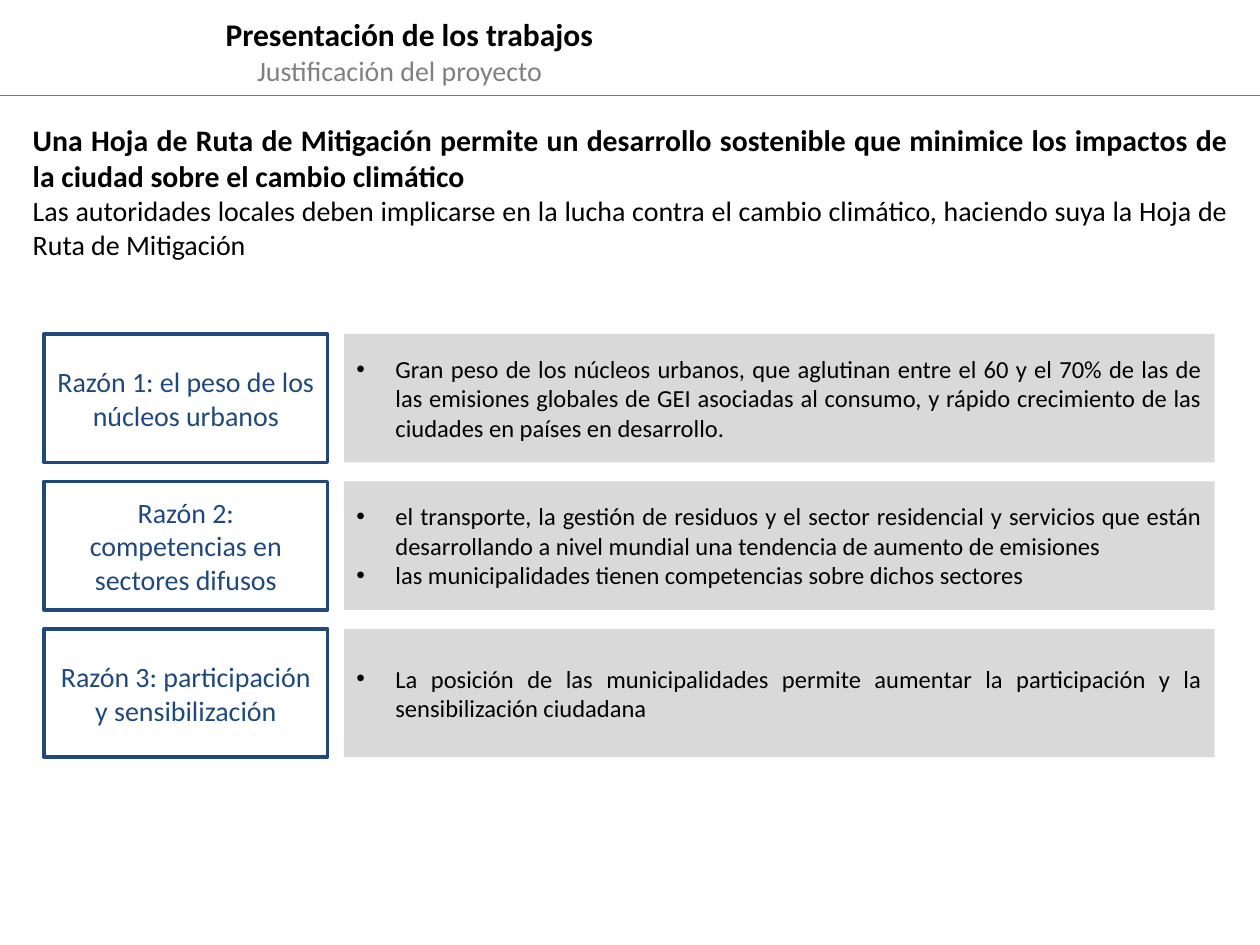
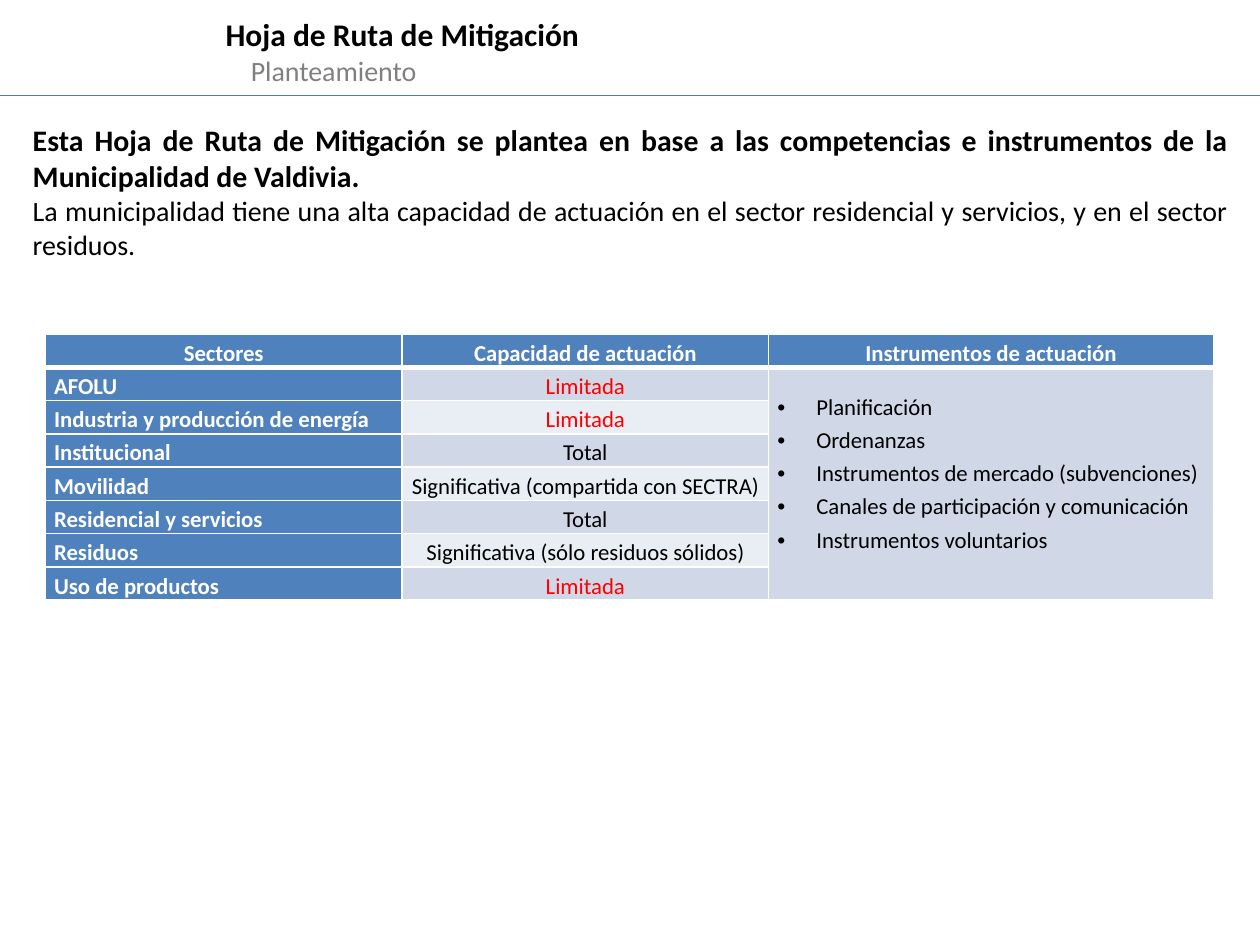
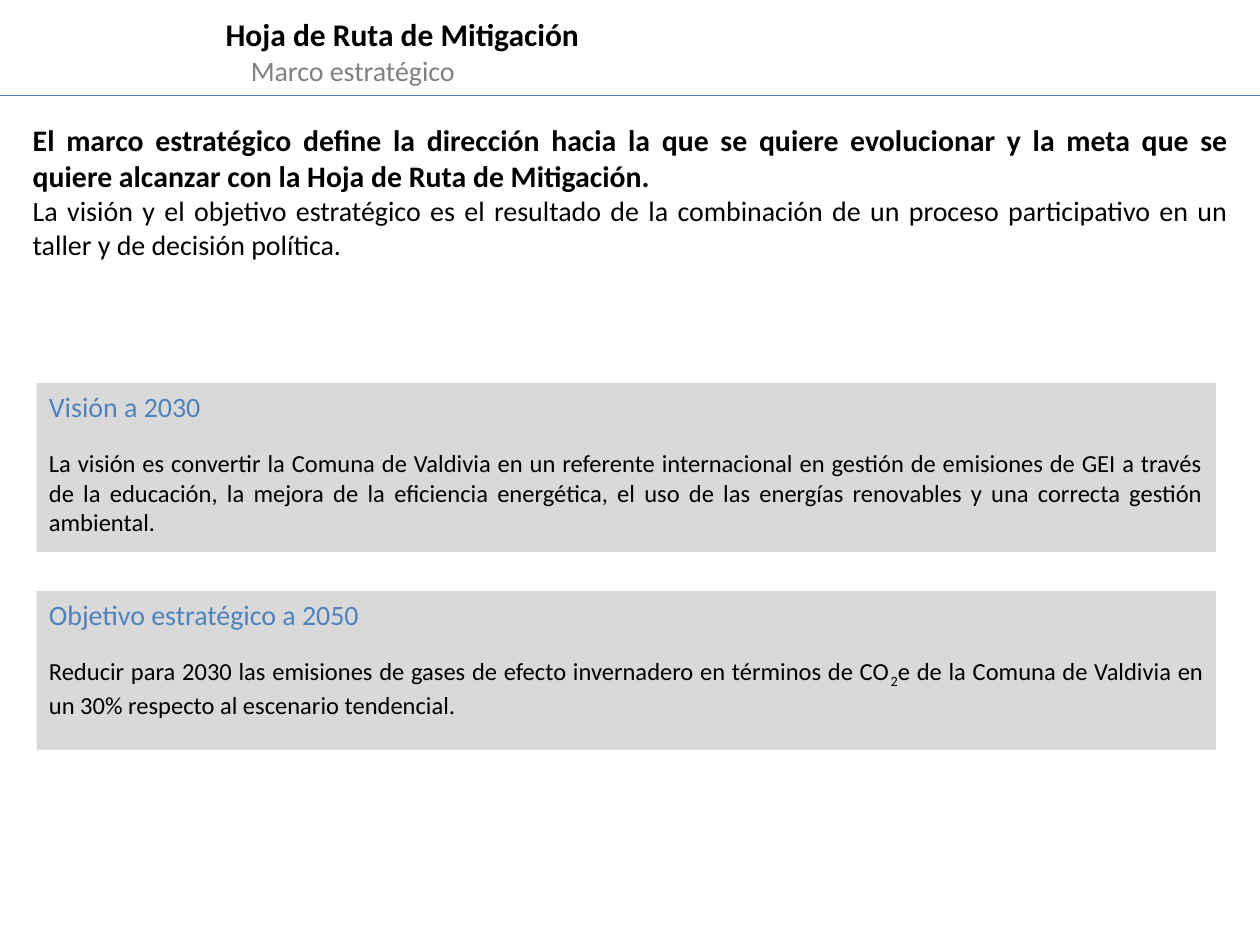
"""Build three slides on a city's mitigation road map."""
from lxml.etree import SubElement
from pptx import Presentation
from pptx.dml.color import RGBColor
from pptx.enum.shapes import MSO_CONNECTOR, MSO_SHAPE
from pptx.enum.text import MSO_ANCHOR, MSO_AUTO_SIZE, PP_ALIGN
from pptx.oxml.ns import qn
from pptx.util import Inches, Pt

FONT = "Calibri"
HUES = {
    "black": "000000", "white": "FFFFFF", "gray": "808080", "panel": "D9D9D9",
    "navy": "1F497D", "blue": "4F81BD", "rule": "4B7EBC", "red": "FF0000",
    "odd": "D0D8E8", "even": "E9EDF4",
}
LEFT, CENTER, FULL = PP_ALIGN.LEFT, PP_ALIGN.CENTER, PP_ALIGN.JUSTIFY

HEADS = [
    ("Presentación de los trabajos", "Justificación del proyecto", 0.25,
     "Una Hoja de Ruta de Mitigación permite un desarrollo sostenible que minimice los impactos de la ciudad sobre el cambio climático",
     "Las autoridades locales deben implicarse en la lucha contra el cambio climático, haciendo suya la Hoja de Ruta de Mitigación"),
    ("Hoja de Ruta de Mitigación", "Planteamiento", 0.2,
     "Esta Hoja de Ruta de Mitigación se plantea en base a las competencias e instrumentos de la Municipalidad de Valdivia.",
     "La municipalidad tiene una alta capacidad de actuación en el sector residencial y servicios, y en el sector residuos."),
    ("Hoja de Ruta de Mitigación", "Marco estratégico", 0.2,
     "El marco estratégico define la dirección hacia la que se quiere evolucionar y la meta que se quiere alcanzar con la Hoja de Ruta de Mitigación.",
     "La visión y el objetivo estratégico es el resultado de la combinación de un proceso participativo en un taller y de decisión política."),
]
REASONS = [
    ("Razón 1: el peso de los núcleos urbanos",
     ["Gran peso de los núcleos urbanos, que aglutinan entre el 60 y el 70% de las de las emisiones globales de GEI asociadas al consumo, y rápido crecimiento de las ciudades en países en desarrollo."]),
    ("Razón 2: competencias en sectores difusos",
     ["el transporte, la gestión de residuos y el sector residencial y servicios que están desarrollando a nivel mundial una tendencia de aumento de emisiones",
      "las municipalidades tienen competencias sobre dichos sectores"]),
    ("Razón 3: participación y sensibilización",
     ["La posición de las municipalidades permite aumentar la participación y la sensibilización ciudadana"]),
]
COLUMNS = [("Sectores", 2.83), ("Capacidad de actuación", 2.91),
           ("Instrumentos de actuación", 3.53)]
SECTORS = [
    ("AFOLU", "Limitada"),
    ("Industria y producción de energía", "Limitada"),
    ("Institucional", "Total"),
    ("Movilidad", "Significativa (compartida con SECTRA)"),
    ("Residencial y servicios", "Total"),
    ("Residuos", "Significativa (sólo residuos sólidos)"),
    ("Uso de productos", "Limitada"),
]
TOOLS = ["Planificación", "Ordenanzas", "Instrumentos de mercado (subvenciones)",
         "Canales de participación y comunicación", "Instrumentos voluntarios"]
GOALS = [
    ("Visión a 2030", 3.04, 1.34,
     "La visión es convertir la Comuna de Valdivia en un referente internacional en gestión de emisiones de GEI a través de la educación, la mejora de la eficiencia energética, el uso de las energías renovables y una correcta gestión ambiental."),
    ("Objetivo estratégico a 2050", 4.69, 1.26,
     "Reducir para 2030 las emisiones de gases de efecto invernadero en términos de CO_2_e de la Comuna de Valdivia en un 30% respecto al escenario tendencial."),
]


def tint(name):
    return RGBColor.from_string(HUES[name])


def write(frame, text, size=14, color="black", bold=False, align=LEFT,
          indent=0, bullet=False, before=0, spacing=1):
    para = frame.paragraphs[0]
    if para.runs:
        para = frame.add_paragraph()
    para.alignment, para.line_spacing = align, spacing
    para.space_before = Pt(before)
    props = para._p.get_or_add_pPr()
    hang = Inches(0.31) if bullet else 0
    props.set("marL", str(Inches(indent) + hang))
    props.set("indent", str(-hang))
    if bullet:
        SubElement(props, qn("a:buFont"), typeface="Arial")
        SubElement(props, qn("a:buChar"), char="•")
    else:
        SubElement(props, qn("a:buNone"))
    for place, part in enumerate(text.split("_")):
        run = para.add_run()
        run.text = part
        font = run.font
        font.name, font.size, font.bold = FONT, Pt(size), bold
        font.color.rgb = tint(color)
        if place % 2:
            font._element.set("baseline", "-25000")


def place(holder, left, top, width, height, anchor):
    holder.left, holder.top = Inches(left), Inches(top)
    holder.width, holder.height = Inches(width), Inches(height)
    frame = holder.text_frame
    frame.word_wrap, frame.auto_size = True, MSO_AUTO_SIZE.NONE
    frame.vertical_anchor = anchor
    return frame


def panel(slide, left, top, width, height, fill="panel", edge=None,
          anchor=MSO_ANCHOR.MIDDLE):
    box = slide.shapes.add_shape(MSO_SHAPE.RECTANGLE, 0, 0, 0, 0)
    box.shadow.inherit = False
    box.fill.solid()
    box.fill.fore_color.rgb = tint(fill)
    if edge:
        box.line.color.rgb, box.line.width = tint(edge), Pt(2)
    else:
        box.line.fill.background()
    return place(box, left, top, width, height, anchor)


def start(deck, title, topic, indent, claim, detail):
    slide = deck.slides.add_slide(deck.slide_layouts[1])
    head = place(slide.shapes.title, 1.69, 0.05, 7.84, 0.71, MSO_ANCHOR.MIDDLE)
    write(head, title, size=18, bold=True)
    write(head, topic, size=16, color="gray", indent=indent)
    body = place(slide.placeholders[1], 0.16, 0.92, 9.69, 1.29, MSO_ANCHOR.TOP)
    write(body, claim, size=17, bold=True, align=FULL)
    write(body, detail, size=16, align=FULL)
    rule = slide.shapes.add_connector(
        MSO_CONNECTOR.STRAIGHT, 0, Inches(0.76), deck.slide_width, Inches(0.76))
    rule.line.color.rgb, rule.line.width = tint("rule"), Pt(0.75)
    SubElement(rule._element.spPr, qn("a:effectLst"))
    return slide


def reasons(slide):
    for row, (name, points) in enumerate(REASONS):
        top = 2.65 + row * 1.17
        frame = panel(slide, 2.73, top, 6.91, 1.02)
        for point in points:
            write(frame, point, align=FULL, bullet=True)
        label = panel(slide, 0.35, top, 2.25, 1.02, fill="white", edge="navy")
        write(label, name, size=16, color="navy", align=CENTER)


def dress(cell, fill, base=1, anchor=MSO_ANCHOR.MIDDLE):
    cell.margin_left = cell.margin_right = Inches(0.07)
    cell.margin_top = cell.margin_bottom = 0
    cell.vertical_anchor = anchor
    props = cell._tc.get_or_add_tcPr()
    for side, width in zip("LRTB", (1, 1, 1, base)):
        edge = SubElement(props, qn(f"a:ln{side}"), w=str(Pt(width)))
        paint = SubElement(edge, qn("a:solidFill"))
        SubElement(paint, qn("a:srgbClr"), val=HUES["white"])
    cell.fill.solid()
    cell.fill.fore_color.rgb = tint(fill)
    return cell.text_frame


def sectors(slide):
    count, high = len(SECTORS) + 1, 0.26
    width = sum(wide for _, wide in COLUMNS)
    grid = slide.shapes.add_table(
        count, len(COLUMNS), Inches(0.36), Inches(2.65),
        Inches(width), Inches(count * high)).table
    form = {"size": 13, "spacing": 1.2}
    for col, (name, wide) in enumerate(COLUMNS):
        grid.columns[col].width = Inches(wide)
        frame = dress(grid.cell(0, col), "blue", 3, MSO_ANCHOR.TOP)
        write(frame, name, color="white", bold=True, align=CENTER, **form)
    for row, (name, power) in enumerate(SECTORS, 1):
        frame = dress(grid.cell(row, 0), "blue", anchor=MSO_ANCHOR.TOP)
        write(frame, name, color="white", bold=True, align=FULL, **form)
        frame = dress(grid.cell(row, 1), "odd" if row % 2 else "even")
        color = "red" if power == "Limitada" else "black"
        write(frame, power, color=color, align=CENTER, **form)
    tall = grid.cell(1, 2)
    tall.merge(grid.cell(count - 1, 2))
    frame = dress(tall, "odd")
    tall.margin_bottom = Inches(0.2)
    for tool in TOOLS:
        write(frame, tool, align=FULL, bullet=True, **form)


def goals(slide):
    for name, top, high, text in GOALS:
        frame = panel(slide, 0.29, top, 9.36, high, anchor=MSO_ANCHOR.TOP)
        write(frame, name, size=16, color="blue")
        write(frame, text, align=FULL, before=14.5)


def main():
    deck = Presentation()
    deck.slide_width, deck.slide_height = Inches(10), Inches(7.5)
    for head, draw in zip(HEADS, (reasons, sectors, goals)):
        draw(start(deck, *head))
    deck.save("out.pptx")


if __name__ == "__main__":
    main()
